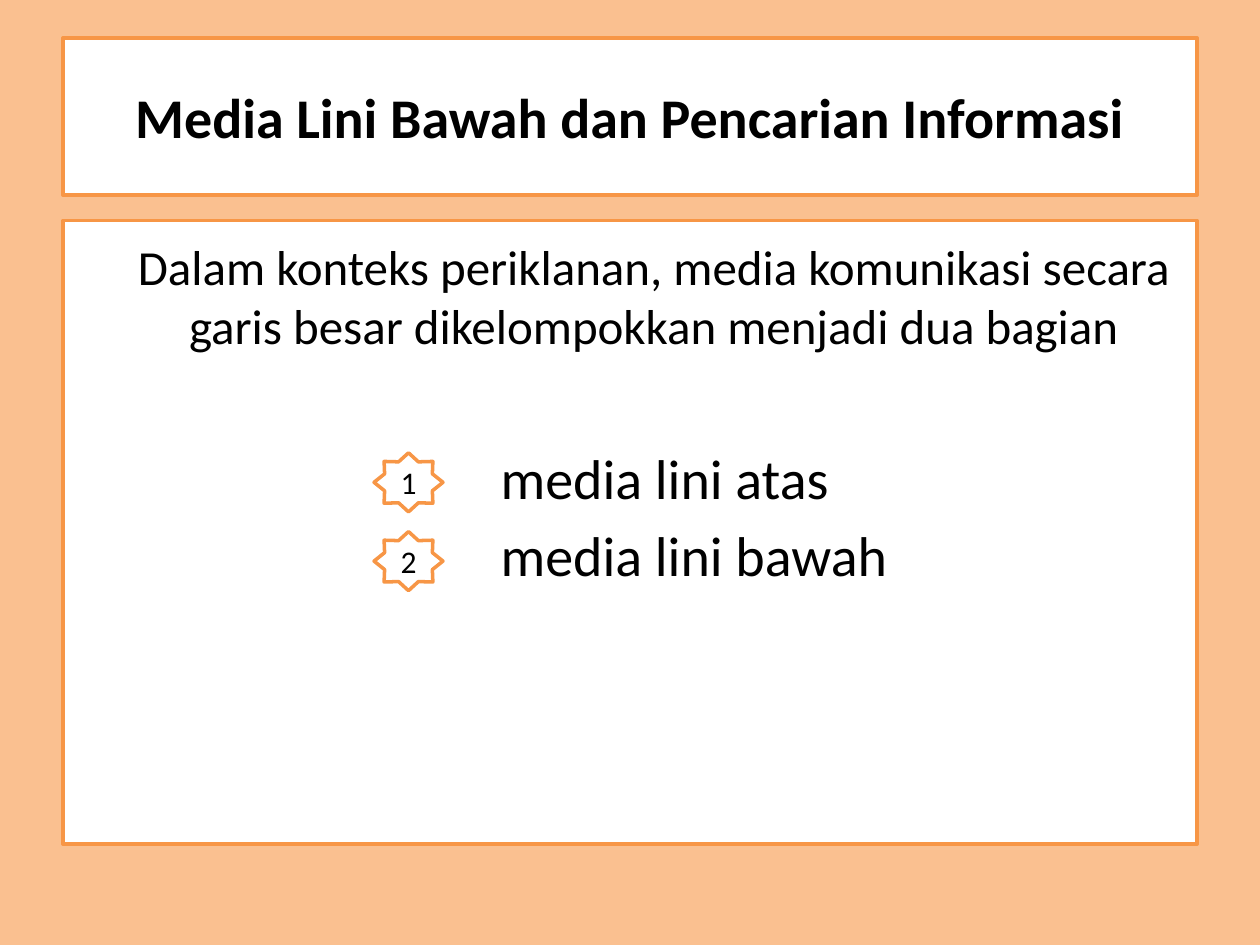
from pptx import Presentation
from pptx.dml.color import RGBColor
from pptx.enum.shapes import MSO_SHAPE as Shape
from pptx.enum.text import MSO_ANCHOR as Anchor, PP_ALIGN as Align
from pptx.util import Pt


def color(value):
    return RGBColor.from_string(value)


class SlideBuilder:
    """Hold the style and the current slide, and add its elements."""

    font = "Calibri"
    ink = "000000"
    paper = "FFFFFF"
    accent = "F79646"
    background = "FAC090"

    def __init__(self, presentation):
        self.slide = presentation.slides.add_slide(presentation.slide_layouts[5])
        fill = self.slide.background.fill
        fill.solid()
        fill.fore_color.rgb = color(self.background)

    def frame(self, shape):
        shape.fill.solid()
        shape.fill.fore_color.rgb = color(self.paper)
        shape.line.color.rgb = color(self.accent)
        shape.line.width = Pt(2)

    def add_text(self, paragraph, text, size, bold=False, align=Align.CENTER):
        paragraph.alignment = align
        run = paragraph.add_run()
        run.text = text
        run.font.name = self.font
        run.font.size = Pt(size)
        run.font.bold = bold
        run.font.color.rgb = color(self.ink)

    def title(self, text, left, top, width, height):
        shape = self.slide.shapes.title
        shape.left, shape.top = Pt(left), Pt(top)
        shape.width, shape.height = Pt(width), Pt(height)
        self.frame(shape)
        shape.text_frame.vertical_anchor = Anchor.MIDDLE
        self.add_text(shape.text_frame.paragraphs[0], text, 32, bold=True)

    def box(self, kind, left, top, width, height):
        shape = self.slide.shapes.add_shape(
            kind, Pt(left), Pt(top), Pt(width), Pt(height))
        shape.shadow.inherit = False
        self.frame(shape)
        return shape.text_frame

    def body(self, intro, items, left, top, width, height):
        text_frame = self.box(Shape.RECTANGLE, left, top, width, height)
        text_frame.word_wrap = True
        text_frame.vertical_anchor = Anchor.TOP
        text_frame.margin_top = Pt(9)
        paragraph = text_frame.paragraphs[0]
        self.indent(paragraph, 27)
        self.add_text(paragraph, intro, 28)
        for index, item in enumerate(items):
            paragraph = text_frame.add_paragraph()
            self.indent(paragraph, 243)
            paragraph.space_before = Pt(6 if index else 51)
            self.add_text(paragraph, item, 32, align=Align.LEFT)

    def indent(self, paragraph, margin):
        properties = paragraph._p.get_or_add_pPr()
        properties.set("marL", str(Pt(margin)))
        properties.set("indent", "0")

    def star(self, text, left, top, width, height):
        text_frame = self.box(Shape.STAR_8_POINT, left, top, width, height)
        text_frame.word_wrap = False
        text_frame.vertical_anchor = Anchor.MIDDLE
        self.add_text(text_frame.paragraphs[0], text, 18)


def main():
    presentation = Presentation()
    presentation.slide_width, presentation.slide_height = Pt(720), Pt(540)
    builder = SlideBuilder(presentation)
    items = ["media lini atas", "media lini bawah"]
    builder.title("Media Lini Bawah dan Pencarian Informasi", 36, 21.6, 648, 90)
    builder.body(
        "Dalam konteks periklanan, media komunikasi secara garis besar "
        "dikelompokkan menjadi dua bagian", items, 36, 126, 648, 356.4)
    for index in range(len(items)):
        builder.star(str(index + 1), 213.75, 258.75 + 45 * index, 39.4, 33.75)
    presentation.save("out.pptx")


if __name__ == "__main__":
    main()
